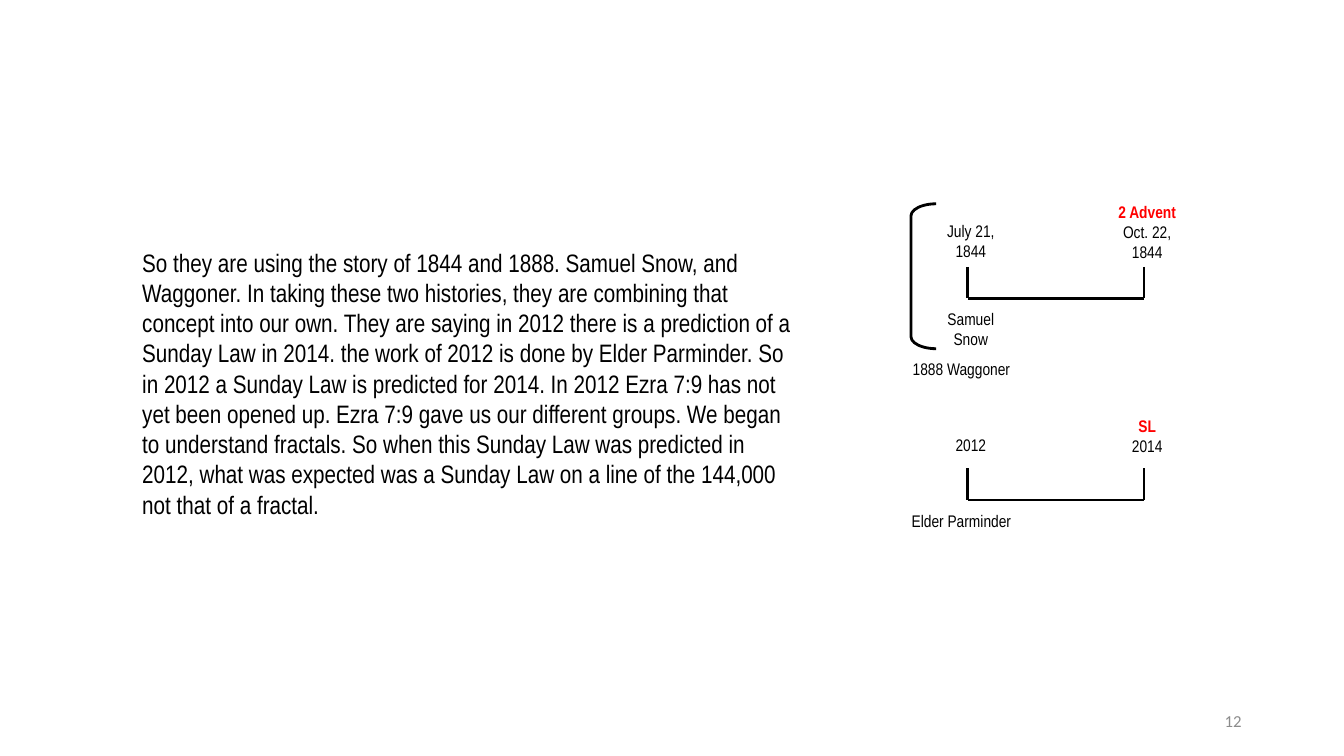
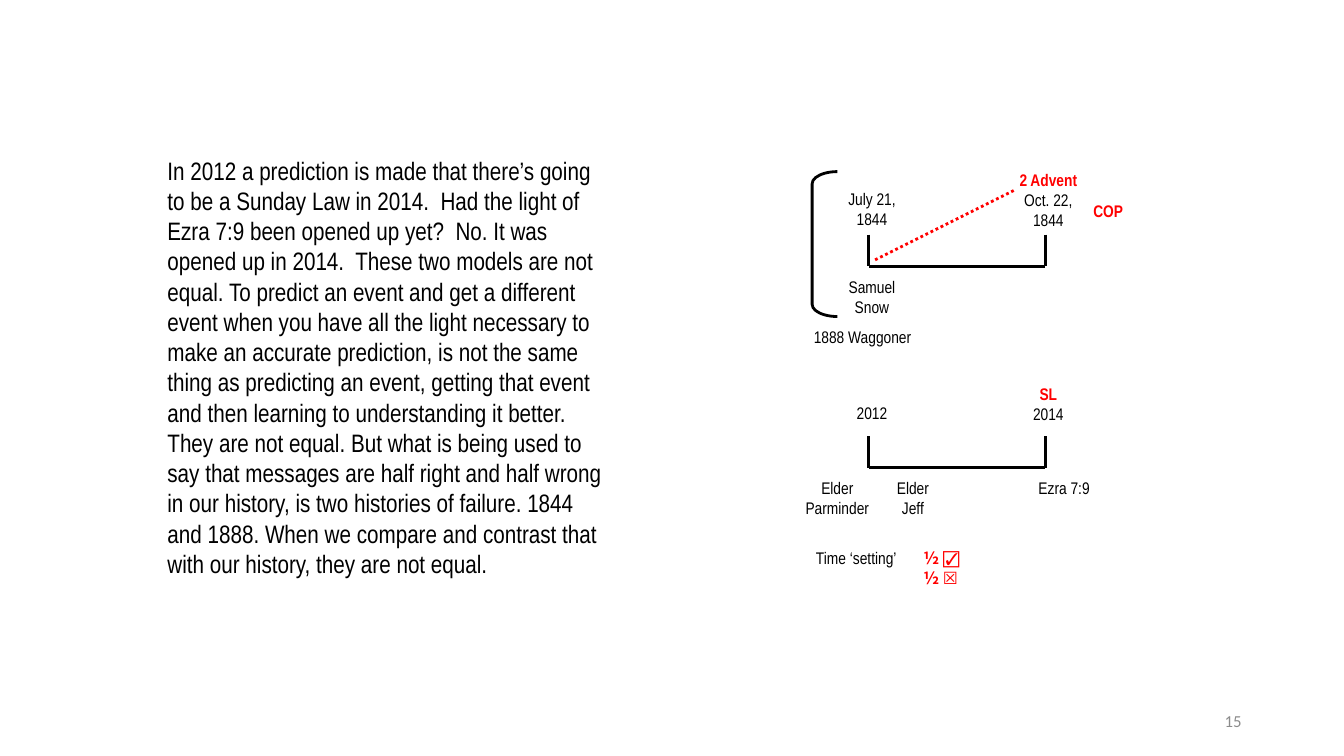
from collections import namedtuple
from lxml.etree import SubElement
from pptx import Presentation
from pptx.dml.color import RGBColor
from pptx.enum.dml import MSO_LINE
from pptx.enum.shapes import MSO_CONNECTOR, MSO_SHAPE
from pptx.enum.text import MSO_ANCHOR, PP_ALIGN
from pptx.oxml.ns import qn
from pptx.util import Pt

# Theme
Theme = namedtuple("Theme", "black red grey face foot mark sign small large stroke inset")
theme = Theme(
    black=RGBColor(0, 0, 0), red=RGBColor(255, 0, 0), grey=RGBColor(0x8C, 0x8C, 0x8C),
    face="Arial Narrow", foot="Calibri", mark="Noto Sans CJK JP", sign="Arial",
    small=Pt(12), large=Pt(18), stroke=Pt(2), inset=Pt(2.88))
LEFT, MID, RIGHT = PP_ALIGN.LEFT, PP_ALIGN.CENTER, PP_ALIGN.RIGHT


def write(shapes, box, text, hot=0, align=MID, size=theme.small,
          face=theme.face, ink=theme.black, tight=True):
    """Add a text box; the first `hot` lines are bold and red."""
    shape = shapes.add_textbox(*[Pt(v) for v in box])
    frame = shape.text_frame
    frame.word_wrap = True
    if tight:
        frame.margin_left = frame.margin_right = theme.inset
        frame.margin_top = frame.margin_bottom = theme.inset
    frame.text = text
    for i, para in enumerate(frame.paragraphs):
        para.alignment = align
        font = para.runs[0].font
        font.name, font.size, font.bold = face, size, i < hot
        font.color.rgb = theme.red if i < hot else ink
    return frame


def rule(shapes, start, end, ink=theme.black):
    """Add a straight line without a shadow."""
    line = shapes.add_connector(MSO_CONNECTOR.STRAIGHT, *[Pt(v) for v in start + end])
    line.line.color.rgb = ink
    line.line.width = theme.stroke
    SubElement(line._element.spPr, qn("a:effectLst"))
    return line


# Shared layout: x and y are measured from the lower left corner of a timeline
SPAN, STEM, DROP = 126, 22.5, 144
LABELS = [
    # row, x, y, width, height, text, red lines
    (0, -18, -58.5, 40.5, 36, "July 21, 1844", 0),
    (0, 103.5, -72, 49.5, 49.5, "2 Advent\nOct. 22, 1844", 1),
    (0, -22.5, 4.5, 49.5, 36, "Samuel Snow", 0),
    (0, -49.5, 40.5, 90, 22.5, "1888 Waggoner", 0),
    (1, -18, -49.5, 40.5, 27, "2012", 0),
    (1, 103.5, -63, 49.5, 40.5, "SL\n2014", 1),
]

# Slide content
Page = namedtuple("Page", "number box body left top extra")
pages = [
    Page("12", (94.5, 172.8, 480, 218),
         "So they are using the story of 1844 and 1888. Samuel Snow, and Waggoner. "
         "In taking these two histories, they are combining that concept into our own. "
         "They are saying in 2012 there is a prediction of a Sunday Law in 2014. "
         "the work of 2012 is done by Elder Parminder. So in 2012 a Sunday Law is "
         "predicted for 2014. In 2012 Ezra 7:9 has not yet been opened up. Ezra 7:9 "
         "gave us our different groups. We began to understand fractals. So when this "
         "Sunday Law was predicted in 2012, what was expected was a Sunday Law on a "
         "line of the 144,000 not that of a fractal.",
         691.2, 213.1,
         [(1, -49.5, 4.5, 90, 22.5, "Elder Parminder", 0)]),
    Page("15", (112.5, 107.2, 328.5, 327),
         "In 2012 a prediction is made that there’s going to be a Sunday Law in 2014.  "
         "Had the light of Ezra 7:9 been opened up yet?  No. It was opened up in 2014.  "
         "These two models are not equal. To predict an event and get a different event "
         "when you have all the light necessary to make an accurate prediction, is not "
         "the same thing as predicting an event, getting that event and then learning "
         "to understanding it better. They are not equal. But what is being used to say "
         "that messages are half right and half wrong in our history, is two histories "
         "of failure. 1844 and 1888. When we compare and contrast that with our history, "
         "they are not equal.",
         620.6, 190.1,
         [(0, 153, -49.5, 36, 27, "COP", 1),
          (1, -49.5, 4.5, 54, 45, "Elder\nParminder", 0),
          (1, 4.5, 4.5, 54, 45, "Elder\nJeff", 0),
          (1, 112.5, 4.5, 54, 22.5, "Ezra 7:9", 0),
          (1, -49.5, 54, 81, 22.5, "Time ‘setting’", 0)]),
]

deck = Presentation()
deck.slide_width, deck.slide_height = Pt(960), Pt(540)

for page in pages:
    slide = deck.slides.add_slide(deck.slide_layouts[6])
    left, top = page.left, page.top

    # Page number and body text
    foot = write(slide.shapes, (678, 500.5, 216, 28.8), page.number, align=RIGHT,
                 face=theme.foot, ink=theme.grey, tight=False)
    foot.vertical_anchor = MSO_ANCHOR.MIDDLE
    write(slide.shapes, page.box, page.body, align=LEFT, size=theme.large, tight=False)

    # Two timelines
    chart = slide.shapes.add_group_shape().shapes
    for base in (top, top + DROP):
        rule(chart, (left, base), (left + SPAN, base))
        for x in (left, left + SPAN):
            rule(chart, (x, base - STEM), (x, base))

    # Bracket around the first timeline's start
    brace = chart.add_shape(MSO_SHAPE.LEFT_BRACKET, Pt(left - 40.5), Pt(top - 67.5),
                            Pt(18), Pt(103.5))
    brace.adjustments[0] = 0.48
    brace.shadow.inherit = False
    brace.fill.background()
    brace.line.color.rgb = theme.black
    brace.line.width = theme.stroke

    # Labels
    for row, x, y, wide, high, text, hot in LABELS + page.extra:
        write(chart, (left + x, top + row * DROP + y, wide, high), text, hot)

# Second slide: dotted link and half marks
link = rule(chart, (left + 4.5, top - 4.5), (left + 103.5, top - 54), theme.red)
link.line.dash_style = MSO_LINE.ROUND_DOT
marks = write(chart, (left + 36, top + DROP + 54, 40.5, 54), "½ \n½ ", hot=2,
              align=LEFT, face=theme.mark)
for para, sign in zip(marks.paragraphs, "☑☒"):
    run = para.add_run()
    run.text = sign
    run.font.name, run.font.size, run.font.bold = theme.sign, theme.small, False
    run.font.color.rgb = theme.red

deck.save("out.pptx")
